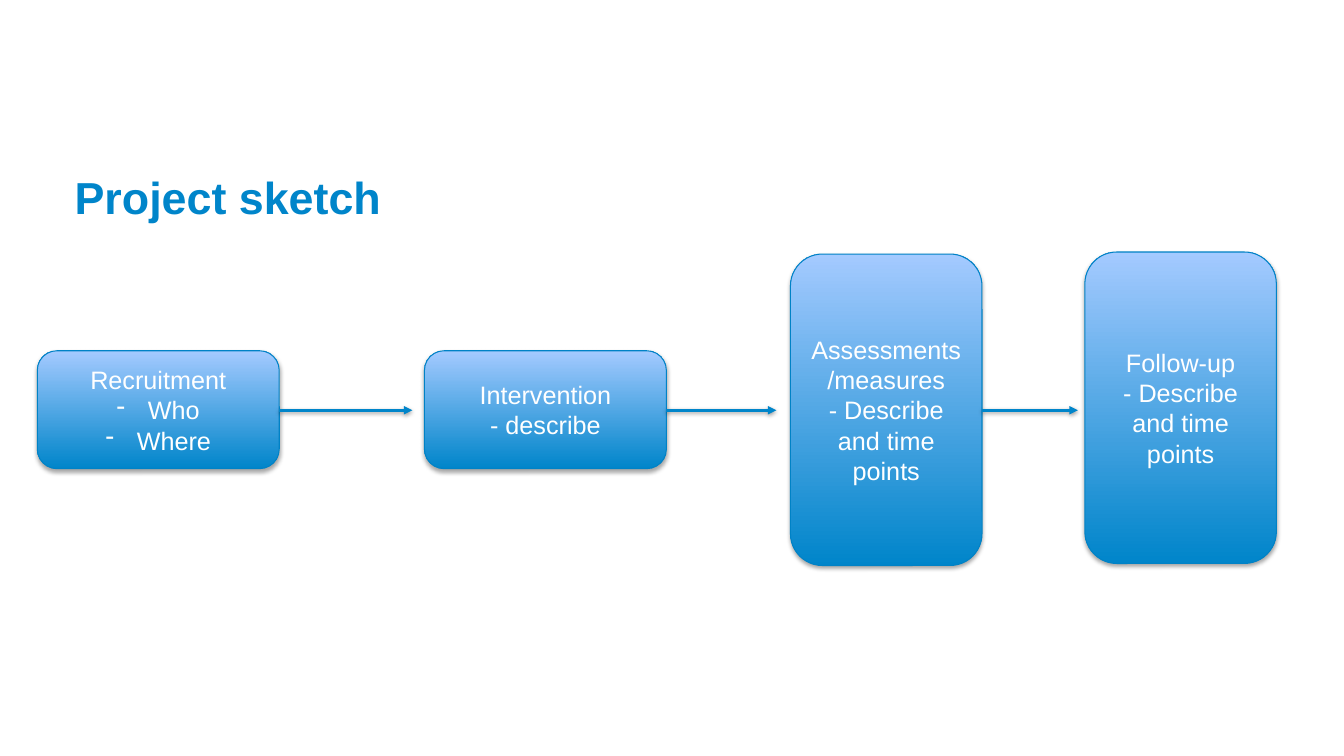
from lxml import etree
from pptx import Presentation
from pptx import util as u
from pptx.dml.color import RGBColor
from pptx.enum import shapes, text
from pptx.oxml import parse_xml
from pptx.oxml.ns import nsdecls, qn

BLUE = RGBColor(0x00, 0x85, 0xCA)
LIGHT_BLUE = RGBColor(0xA4, 0xCA, 0xFF)
EDGE_BLUE = RGBColor(0x00, 0x82, 0xC6)
WHITE = RGBColor(0xFF, 0xFF, 0xFF)
FONT = "Arial"

TITLE = "Project sketch"
WIDE, TALL = (2.4, 1.17), (1.9, 3.09)
# heading, details, bulleted, left, top, size, end of the arrow to the next step
STEPS = [
    ("Recruitment", ["Who", "Where"], True, 0.37, 3.48, WIDE, 4.09),
    ("Intervention", ["- describe"], False, 4.21, 3.48, WIDE, 7.7),
    ("Assessments/measures", ["- Describe and time points"], False,
     7.84, 2.52, TALL, 10.69),
    ("Follow-up", ["- Describe and time points"], False,
     10.76, 2.5, TALL, None),
]
ARROW_Y = 4.07
BULLET_INDENT = u.Inches(0.31)


def format_runs(paragraph, size, color, bold=False):
    for run in paragraph.runs:
        run.font.name = FONT
        run.font.size = u.Pt(size)
        run.font.bold = bold
        run.font.color.rgb = color


def add_shadow(shape, distance, opacity):
    """Put a soft black shadow straight below the shape."""
    shape._element.spPr.append(parse_xml(
        f'<a:effectLst {nsdecls("a")}>'
        f'<a:outerShdw blurRad="{u.Pt(3.1)}" dist="{u.Pt(distance)}" '
        'dir="5400000" rotWithShape="0"><a:srgbClr val="000000">'
        f'<a:alpha val="{opacity * 1000}"/></a:srgbClr>'
        '</a:outerShdw></a:effectLst>'))


def add_dash_bullet(paragraph):
    properties = paragraph._p.get_or_add_pPr()
    properties.set("marL", str(BULLET_INDENT))
    properties.set("indent", str(-BULLET_INDENT))
    etree.SubElement(properties, qn("a:buChar"), char="-")


def add_step(slide, heading, details, bulleted, left, top, size):
    box = slide.shapes.add_shape(
        shapes.MSO_SHAPE.ROUNDED_RECTANGLE,
        *(u.Inches(length) for length in (left, top, *size)))
    box.fill.gradient()
    box.fill.gradient_angle = 90
    for stop, color in zip(box.fill.gradient_stops, (BLUE, LIGHT_BLUE)):
        stop.color.rgb = color
    box.line.color.rgb = EDGE_BLUE
    box.line.width = u.Pt(0.75)
    add_shadow(box, 1.8, 35)

    frame = box.text_frame
    frame.word_wrap = True
    frame.vertical_anchor = text.MSO_ANCHOR.MIDDLE
    frame.text = "\n".join([heading, *details])
    for index, paragraph in enumerate(frame.paragraphs):
        paragraph.alignment = text.PP_ALIGN.CENTER
        if bulleted and index > 0:
            add_dash_bullet(paragraph)
        format_runs(paragraph, 18, WHITE)


def add_arrow(slide, start, end):
    arrow = slide.shapes.add_connector(
        shapes.MSO_CONNECTOR.STRAIGHT,
        *(u.Inches(length) for length in (start, ARROW_Y, end, ARROW_Y)))
    arrow.line.color.rgb = BLUE
    arrow.line.width = u.Pt(2)
    etree.SubElement(arrow.line._get_or_add_ln(), qn("a:tailEnd"),
                     type="triangle")
    add_shadow(arrow, 1.6, 38)


def add_title(slide):
    title = slide.shapes.title
    title.left, title.top, title.width, title.height = (
        u.Inches(length) for length in (0.74, 1.65, 12, 0.56))
    frame = title.text_frame
    frame.text = TITLE
    frame.margin_left = frame.margin_right = frame.margin_bottom = 0
    frame.margin_top = u.Inches(0.05)
    frame.vertical_anchor = text.MSO_ANCHOR.MIDDLE
    frame.paragraphs[0].alignment = text.PP_ALIGN.LEFT
    format_runs(frame.paragraphs[0], 32, BLUE, bold=True)


def main():
    presentation = Presentation()
    presentation.slide_width = u.Inches(13.33)
    presentation.slide_height = u.Inches(7.5)
    slide = presentation.slides.add_slide(presentation.slide_layouts[5])
    add_title(slide)
    for *step, arrow_end in STEPS:
        add_step(slide, *step)
        if arrow_end:
            left, _, (width, _) = step[3:]
            add_arrow(slide, left + width, arrow_end)
    presentation.save("out.pptx")


if __name__ == "__main__":
    main()
